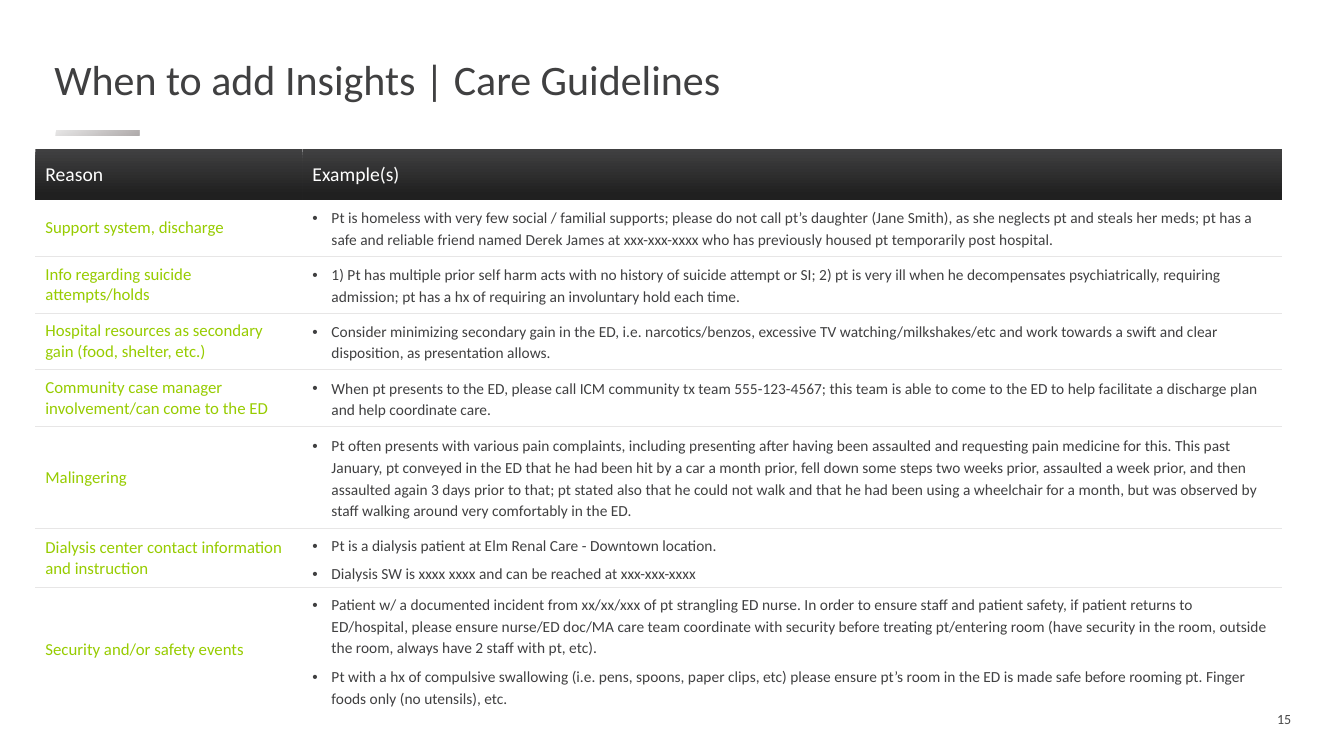
from lxml import etree
from pptx import Presentation
from pptx.dml.color import RGBColor
from pptx.enum import shapes, text
from pptx.oxml import ns
from pptx.util import Cm, Pt

FONT = "Calibri"
DARK = RGBColor(0x40, 0x40, 0x41)
NEAR_BLACK = RGBColor(0x20, 0x20, 0x20)
NUMBER_GREY = RGBColor(0x47, 0x47, 0x47)
LIGHT_GREY = RGBColor(0xE7, 0xE6, 0xE6)
MID_GREY = RGBColor(0xAF, 0xAB, 0xAB)
GREEN = RGBColor(0x97, 0xCC, 0x00)
WHITE = RGBColor(0xFF, 0xFF, 0xFF)
PLAIN_TABLE_STYLE = "{2D5ABB26-0587-4C30-8999-92F81FD0307C}"

COLUMN_WIDTHS = [6.73, 24.69]
ROW_HEIGHTS = [1.27, 1.43, 1.43, 1.43, 1.43, 2.57, 1.48, 3.1]
HEADINGS = ["Reason", "Example(s)"]
GUIDELINES = [
    ("Support system, discharge", [
        "Pt is homeless with very few social / familial supports; please do not call pt’s "
        "daughter (Jane Smith), as she neglects pt and steals her meds; pt has a safe and "
        "reliable friend named Derek James at xxx-xxx-xxxx who has previously housed pt "
        "temporarily post hospital."]),
    ("Info regarding suicide attempts/holds", [
        "1) Pt has multiple prior self harm acts with no history of suicide attempt or SI; "
        "2) pt is very ill when he decompensates psychiatrically, requiring admission; pt has "
        "a hx of requiring an involuntary hold each time."]),
    ("Hospital resources as secondary gain (food, shelter, etc.)", [
        "Consider minimizing secondary gain in the ED, i.e. narcotics/benzos, excessive TV "
        "watching/milkshakes/etc and work towards a swift and clear disposition, as "
        "presentation allows."]),
    ("Community case manager involvement/can come to the ED", [
        "When pt presents to the ED, please call ICM community tx team 555-123-4567; this team "
        "is able to come to the ED to help facilitate a discharge plan and help coordinate "
        "care."]),
    ("Malingering", [
        "Pt often presents with various pain complaints, including presenting after having "
        "been assaulted and requesting pain medicine for this. This past January, pt conveyed "
        "in the ED that he had been hit by a car a month prior, fell down some steps two weeks "
        "prior, assaulted a week prior, and then assaulted again 3 days prior to that; pt "
        "stated also that he could not walk and that he had been using a wheelchair for a "
        "month, but was observed by staff walking around very comfortably in the ED."]),
    ("Dialysis center contact information and instruction", [
        "Pt is a dialysis patient at Elm Renal Care - Downtown location.",
        "Dialysis SW is xxxx xxxx and can be reached at xxx-xxx-xxxx"]),
    ("Security and/or safety events", [
        "Patient w/ a documented incident from xx/xx/xxx of pt strangling ED nurse. In order to "
        "ensure staff and patient safety, if patient returns to ED/hospital, please ensure "
        "nurse/ED doc/MA care team coordinate with security before treating pt/entering room "
        "(have security in the room, outside the room, always have 2 staff with pt, etc).",
        "Pt with a hx of compulsive swallowing (i.e. pens, spoons, paper clips, etc) please "
        "ensure pt’s room in the ED is made safe before rooming pt. Finger foods only (no "
        "utensils), etc."]),
]


def style_text(frame, size, color):
    for para in frame.paragraphs:
        for span in para.runs:
            span.font.name = FONT
            span.font.size = Pt(size)
            span.font.bold = False
            span.font.color.rgb = color


def fill_gradient(fill, first, last, end, angle):
    """Blend two colours; the angle runs counter-clockwise."""
    fill.gradient()
    fill.gradient_angle = angle
    for stop, color, position in zip(fill.gradient_stops, (first, last), (0, end)):
        stop.color.rgb = color
        stop.position = position


def add_label(page, box, words, size, color):
    label = page.shapes.add_textbox(*map(Cm, box))
    frame = label.text_frame
    frame.word_wrap = True
    frame.vertical_anchor = text.MSO_ANCHOR.MIDDLE
    frame.margin_top = frame.margin_bottom = 0
    frame.text = words
    style_text(frame, size, color)
    return frame.paragraphs[0]


def add_heading(page, box):
    left, top, width, height = box
    para = add_label(page, box, "When to add Insights | Care Guidelines", 30, DARK)
    para.line_spacing = 0.9
    accent = page.shapes.add_shape(shapes.MSO_SHAPE.RECTANGLE, Cm(left + 0.28),
                                   Cm(top + 1.96), Cm(2.11), Cm(0.14))
    accent.shadow.inherit = False
    accent.line.fill.background()
    fill_gradient(accent.fill, LIGHT_GREY, MID_GREY, 1, 300)


def add_rule(cell, side):
    """Draw a thin grey line on one side of a cell: lnT or lnB."""
    properties = cell._tc.get_or_add_tcPr()
    line = etree.Element(ns.qn("a:" + side), w=str(Pt(1)))
    solid = etree.SubElement(line, ns.qn("a:solidFill"))
    etree.SubElement(solid, ns.qn("a:srgbClr"), val=str(LIGHT_GREY))
    borders = [child for child in properties if child.tag.startswith(ns.qn("a:ln"))]
    properties.insert(len(borders), line)


def add_bullet(para):
    para.line_spacing = 1.14
    para.space_after = Pt(5)
    properties = para._p.get_or_add_pPr()
    properties.set("marL", str(Cm(0.48)))
    properties.set("indent", str(-Cm(0.48)))
    etree.SubElement(properties, ns.qn("a:buFont"), typeface="Arial")
    etree.SubElement(properties, ns.qn("a:buChar"), char="•")


def fill_cell(cell, words, size, color):
    cell.vertical_anchor = text.MSO_ANCHOR.MIDDLE
    cell.text_frame.text = words
    style_text(cell.text_frame, size, color)


def add_guidelines(page, box):
    frame = page.shapes.add_table(len(ROW_HEIGHTS), len(COLUMN_WIDTHS), *map(Cm, box))
    table = frame.table
    table.horz_banding = False
    table._tbl.tblPr.find(ns.qn("a:tableStyleId")).text = PLAIN_TABLE_STYLE
    for column, width in zip(table.columns, COLUMN_WIDTHS):
        column.width = Cm(width)
    for row, height in zip(table.rows, ROW_HEIGHTS):
        row.height = Cm(height)

    for cell, heading in zip(table.rows[0].cells, HEADINGS):
        fill_cell(cell, heading, 14, WHITE)
        fill_gradient(cell.fill, DARK, NEAR_BLACK, 0.9, 270)

    for index, (reason, examples) in enumerate(GUIDELINES, start=1):
        reason_cell, example_cell = table.rows[index].cells
        fill_cell(reason_cell, reason, 12, GREEN)
        fill_cell(example_cell, "\n".join(examples), 11, DARK)
        for para in example_cell.text_frame.paragraphs:
            add_bullet(para)
        for cell in (reason_cell, example_cell):
            cell.fill.background()
            if index > 1:
                add_rule(cell, "lnT")
            if index < len(GUIDELINES):
                add_rule(cell, "lnB")


def add_page_number(page, box):
    para = add_label(page, box, "15", 10, NUMBER_GREY)
    para.alignment = text.PP_ALIGN.RIGHT


def main():
    deck = Presentation()
    deck.slide_width, deck.slide_height = Cm(33.87), Cm(19.05)
    page = deck.slides.add_slide(deck.slide_layouts[6])
    add_heading(page, (1.12, 1.32, 31.65, 1.47))
    add_page_number(page, (23.93, 17.91, 8.86, 0.41))
    add_guidelines(page, (0.89, 3.76, sum(COLUMN_WIDTHS), sum(ROW_HEIGHTS)))
    deck.save("out.pptx")


if __name__ == "__main__":
    main()
